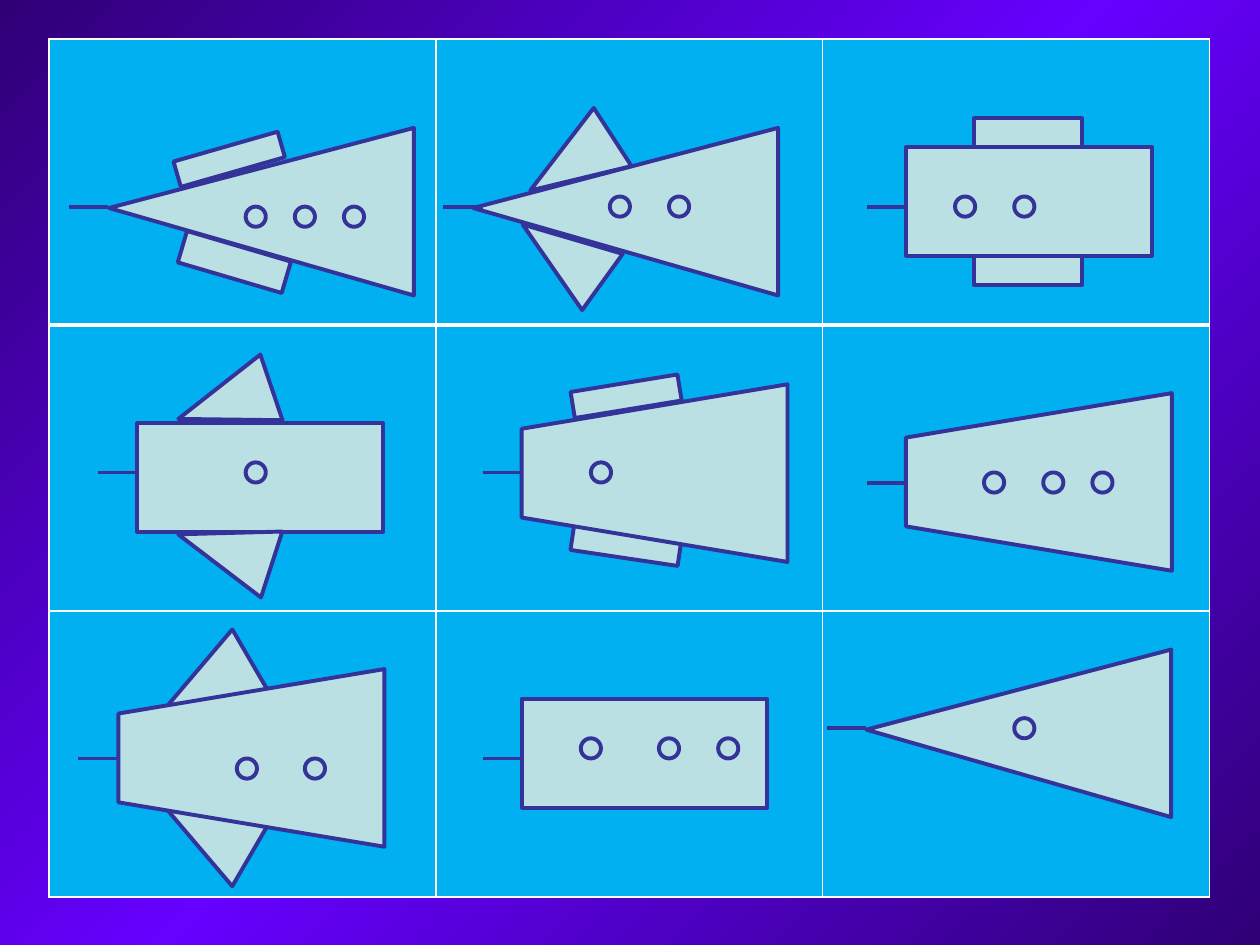
import copy
import dataclasses

import pptx
import pptx.dml.color
import pptx.enum.shapes
import pptx.oxml
import pptx.oxml.ns
import pptx.util

Inches = pptx.util.Inches
MSO = pptx.enum.shapes.MSO_SHAPE


@dataclasses.dataclass(frozen=True)
class Theme:
    backdrop: tuple = ((0, "2F0076"), (0.5, "6600FF"), (1, "2F0076"))
    cell: str = "00B0F0"
    grid: str = "FFFFFF"
    hull: str = "BBE0E3"
    outline: str = "333399"
    outline_width: float = 2.25
    grid_width: float = 1
    header_rule: float = 3


@dataclasses.dataclass(frozen=True)
class Part:
    kind: MSO
    x: float
    y: float
    width: float
    height: float
    rotation: float = 0
    adjustment: float | None = None


@dataclasses.dataclass(frozen=True)
class Rocket:
    antenna: tuple
    body: Part
    portholes: tuple
    porthole_y: float
    fins: tuple = ()
    fins_behind: bool = False


THEME = Theme()
ANTENNA_LENGTH = 0.31
PORTHOLE_SIZE = 0.16
COLUMN_WIDTH, ROW_HEIGHT = 3.07, 2.27


def cone(x, y):
    return Part(MSO.ISOSCELES_TRIANGLE, x, y, 1.33, 2.42, 270, 0.522)


def block(x, y):
    return Part(MSO.RECTANGLE, x, y, 1.95, 0.86)


def funnel(x, y):
    return Part(MSO.TRAPEZOID, x, y, 1.41, 2.11, 270)


def wing(x, y, rotation):
    return Part(MSO.ISOSCELES_TRIANGLE, x, y, 0.55, 0.78, rotation)


def panel(x, y, height=0.23, rotation=0):
    return Part(MSO.RECTANGLE, x, y, 0.86, height, rotation)


ROCKETS = (
    Rocket((0.55, 1.64), cone(1.41, 0.47), (1.95, 2.34, 2.73), 1.64,
           (panel(1.43, 1.95, 0.26, 16.4), panel(1.39, 1.16, 0.21, 344))),
    Rocket((3.52, 1.64), cone(4.3, 0.47), (4.84, 5.31), 1.56,
           (wing(4.19, 1.62, 305.8), wing(4.26, 0.91, 237))),
    Rocket((6.88, 1.64), block(7.19, 1.17), (7.58, 8.05), 1.56,
           (panel(7.73, 0.94), panel(7.73, 2.03))),
    Rocket((0.78, 3.75), block(1.09, 3.36), (1.95,), 3.67,
           (wing(1.51, 2.81, 251.3), wing(1.51, 3.97, 287.9))),
    Rocket((3.83, 3.75), funnel(4.49, 2.7), (4.69,), 3.67,
           (panel(4.54, 4.2, 0.23, 8.5), panel(4.54, 3.04, 0.21, 350.7)), True),
    Rocket((6.88, 3.83), funnel(7.54, 2.77), (7.81, 8.28, 8.67), 3.75),
    Rocket((0.62, 6.02), funnel(1.29, 4.96), (1.88, 2.42), 6.02,
           (wing(1.37, 6.21, 300.2), wing(1.37, 5.04, 239.8)), True),
    Rocket((3.83, 6.02), block(4.14, 5.55), (4.61, 5.23, 5.7), 5.86),
    Rocket((6.56, 5.78), cone(7.42, 4.61), (8.05,), 5.7),
)


def rgb(value):
    return pptx.dml.color.RGBColor.from_string(value)


def paint_background(slide):
    fill = slide.background.fill
    fill.gradient()
    fill.gradient_angle = 315
    stop_list = slide.element.find(".//" + pptx.oxml.ns.qn("a:gsLst"))
    stop_list.append(copy.deepcopy(stop_list[1]))
    for stop, (position, color) in zip(fill.gradient_stops, THEME.backdrop):
        stop.position = position
        stop.color.rgb = rgb(color)


def border_cell(cell, widths):
    """Draw cell borders from a mapping of side letter to width in points."""
    properties = cell._tc.get_or_add_tcPr()
    for index, side in enumerate("LRTB"):
        properties.insert(index, pptx.oxml.parse_xml(
            f'<a:ln{side} {pptx.oxml.ns.nsdecls("a")} w="{pptx.util.Pt(widths[side])}">'
            f'<a:solidFill><a:srgbClr val="{THEME.grid}"/></a:solidFill></a:ln{side}>'))


def add_grid(slide):
    grid = slide.shapes.add_table(
        3, 3, Inches(0.39), Inches(0.31),
        Inches(3 * COLUMN_WIDTH), Inches(3 * ROW_HEIGHT)).table
    for column in grid.columns:
        column.width = Inches(COLUMN_WIDTH)
    for index, row in enumerate(grid.rows):
        row.height = Inches(ROW_HEIGHT)
        widths = dict.fromkeys("LRTB", THEME.grid_width)
        if index == 0:
            widths["B"] = THEME.header_rule
        elif index == 1:
            widths["T"] = THEME.header_rule
        for cell in row.cells:
            cell.fill.solid()
            cell.fill.fore_color.rgb = rgb(THEME.cell)
            border_cell(cell, widths)


def outline(line):
    line.color.rgb = rgb(THEME.outline)
    line.width = pptx.util.Pt(THEME.outline_width)


def add_part(slide, part):
    shape = slide.shapes.add_shape(
        part.kind, Inches(part.x), Inches(part.y),
        Inches(part.width), Inches(part.height))
    shape.rotation = part.rotation
    if part.adjustment is not None:
        shape.adjustments[0] = part.adjustment
    shape.shadow.inherit = False
    shape.fill.solid()
    shape.fill.fore_color.rgb = rgb(THEME.hull)
    outline(shape.line)


def add_antenna(slide, x, y):
    antenna = slide.shapes.add_connector(
        pptx.enum.shapes.MSO_CONNECTOR.STRAIGHT,
        Inches(x), Inches(y), Inches(x + ANTENNA_LENGTH), Inches(y))
    outline(antenna.line)
    antenna.element.spPr.append(
        pptx.oxml.parse_xml(f'<a:effectLst {pptx.oxml.ns.nsdecls("a")}/>'))


def add_rocket(slide, rocket):
    hull = (rocket.body, *rocket.fins)
    if rocket.fins_behind:
        hull = (*rocket.fins, rocket.body)
    for part in hull:
        add_part(slide, part)
    add_antenna(slide, *rocket.antenna)
    for x in rocket.portholes:
        add_part(slide, Part(MSO.OVAL, x, rocket.porthole_y, PORTHOLE_SIZE, PORTHOLE_SIZE))


def main():
    deck = pptx.Presentation()
    deck.slide_width, deck.slide_height = Inches(10), Inches(7.5)
    slide = deck.slides.add_slide(deck.slide_layouts[6])
    paint_background(slide)
    add_grid(slide)
    for rocket in ROCKETS:
        add_rocket(slide, rocket)
    deck.save("out.pptx")


if __name__ == "__main__":
    main()
